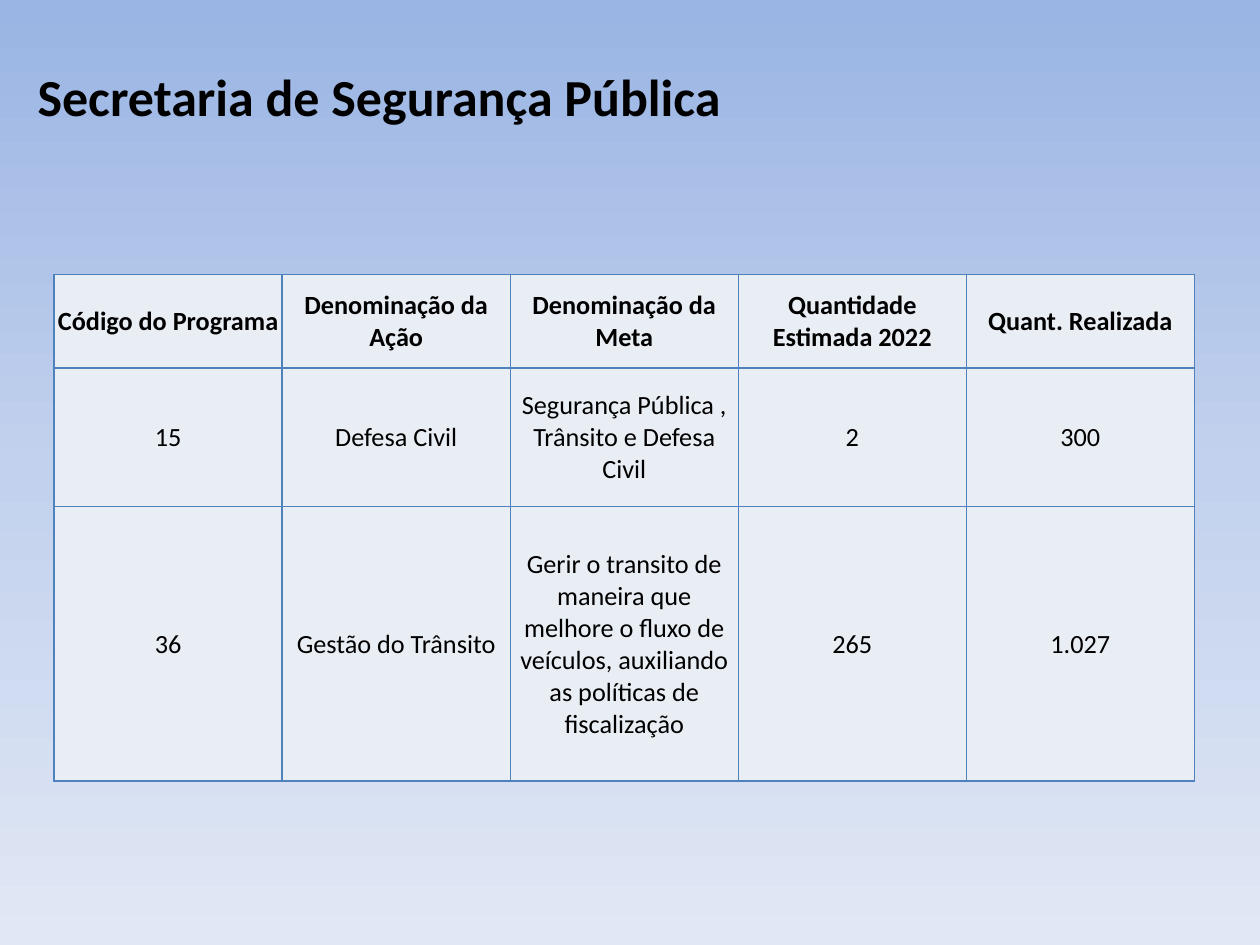
import copy

import pptx
import pptx.dml.color
import pptx.enum.text
import pptx.oxml
import pptx.oxml.ns
import pptx.util
from pptx.util import Inches

TITLE = "Secretaria de Segurança Pública"
ROWS = [
    ["Código do Programa", "Denominação da Ação", "Denominação da Meta",
     "Quantidade Estimada 2022", "Quant. Realizada"],
    ["15", "Defesa Civil", "Segurança Pública , Trânsito e Defesa Civil", "2", "300"],
    ["36", "Gestão do Trânsito",
     "Gerir o transito de maneira que melhore o fluxo de veículos, "
     "auxiliando as políticas de fiscalização", "265", "1.027"],
]
ROW_HEIGHTS = [0.74, 1.1, 2.18]
COLUMN_WIDTH = 1.81
COLORS = {"text": "000000", "cell": "E9EDF4", "border": "4F81BD",
          "sky": "9AB5E4", "haze": "C2D1ED", "mist": "E1E8F5"}
GRADIENT = [(0, "sky"), (0.5, "haze"), (1, "mist")]


def color(name):
    return pptx.dml.color.RGBColor.from_string(COLORS[name])


def style_text(paragraph, size, bold):
    paragraph.font.name = "Calibri"
    paragraph.font.size = pptx.util.Pt(size)
    paragraph.font.bold = bold
    paragraph.font.color.rgb = color("text")


def paint_background(slide):
    fill = slide.background.fill
    fill.gradient()
    fill.gradient_angle = 270
    stops = slide.element.find(".//" + pptx.oxml.ns.qn("a:gsLst"))
    stops.append(copy.deepcopy(stops[-1]))
    for stop, (position, name) in zip(fill.gradient_stops, GRADIENT):
        stop.position = position
        stop.color.rgb = color(name)


def add_borders(cell):
    properties = cell._tc.get_or_add_tcPr()
    for index, side in enumerate(("lnL", "lnR", "lnT", "lnB")):
        properties.insert(index, pptx.oxml.parse_xml(
            f'<a:{side} {pptx.oxml.ns.nsdecls("a")} w="{pptx.util.Pt(1)}"><a:solidFill>'
            f'<a:srgbClr val="{COLORS["border"]}"/></a:solidFill></a:{side}>'))


def add_title(slide):
    box = slide.shapes.add_textbox(Inches(0.2), Inches(0.4), Inches(8.5), Inches(0.72))
    frame = box.text_frame
    frame.word_wrap = True
    frame.vertical_anchor = pptx.enum.text.MSO_ANCHOR.MIDDLE
    frame.text = TITLE
    style_text(frame.paragraphs[0], 29.7, True)


def add_goals_table(slide):
    columns = len(ROWS[0])
    table = slide.shapes.add_table(
        len(ROWS), columns, Inches(0.43), Inches(2.18),
        Inches(COLUMN_WIDTH * columns), Inches(sum(ROW_HEIGHTS))).table
    for column in table.columns:
        column.width = Inches(COLUMN_WIDTH)
    for row_index, (row, height) in enumerate(zip(ROWS, ROW_HEIGHTS)):
        table.rows[row_index].height = Inches(height)
        for column_index, text in enumerate(row):
            cell = table.cell(row_index, column_index)
            cell.text = text
            cell.fill.solid()
            cell.fill.fore_color.rgb = color("cell")
            cell.margin_left = cell.margin_right = cell.margin_top = Inches(0.01)
            cell.margin_bottom = 0
            cell.vertical_anchor = pptx.enum.text.MSO_ANCHOR.MIDDLE
            paragraph = cell.text_frame.paragraphs[0]
            paragraph.alignment = pptx.enum.text.PP_ALIGN.CENTER
            style_text(paragraph, 15, row_index == 0)
            add_borders(cell)


def main():
    presentation = pptx.Presentation()
    presentation.slide_width = Inches(10)
    presentation.slide_height = Inches(7.5)
    slide = presentation.slides.add_slide(presentation.slide_layouts[6])
    paint_background(slide)
    add_title(slide)
    add_goals_table(slide)
    presentation.save("out.pptx")


if __name__ == "__main__":
    main()
